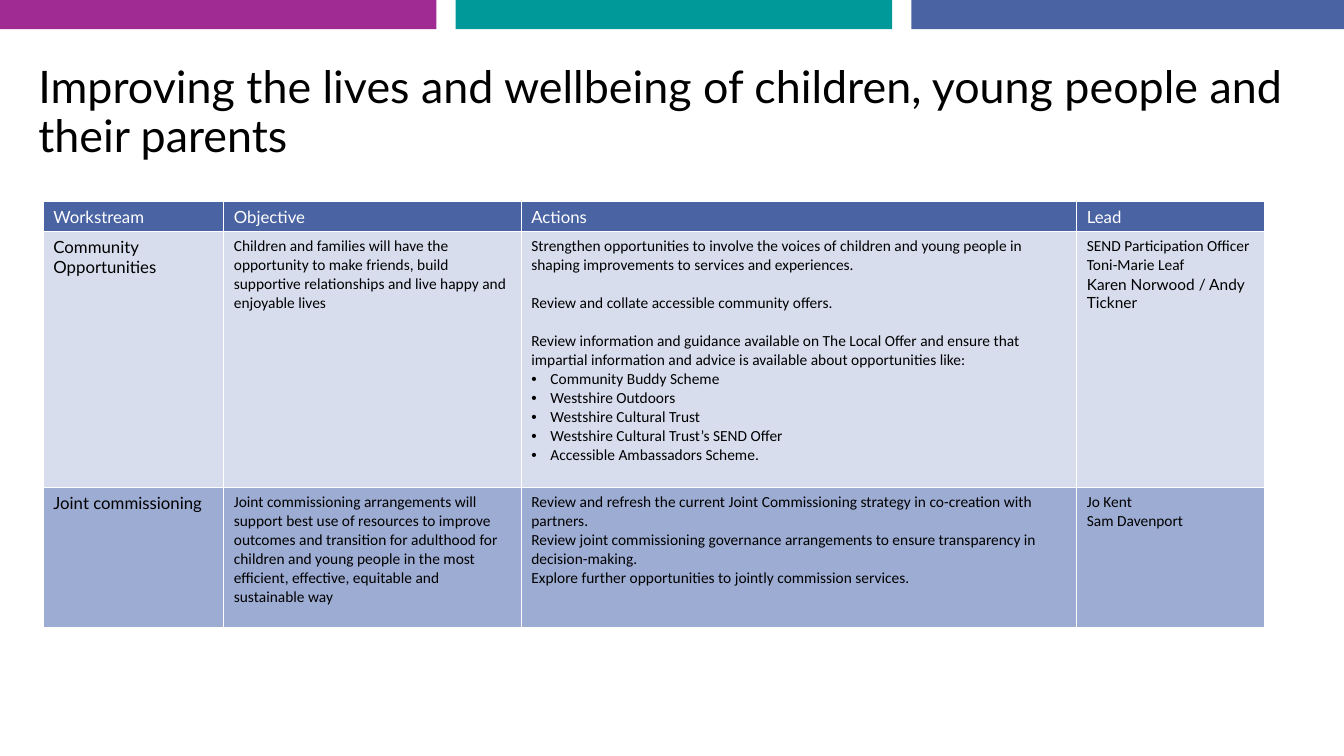
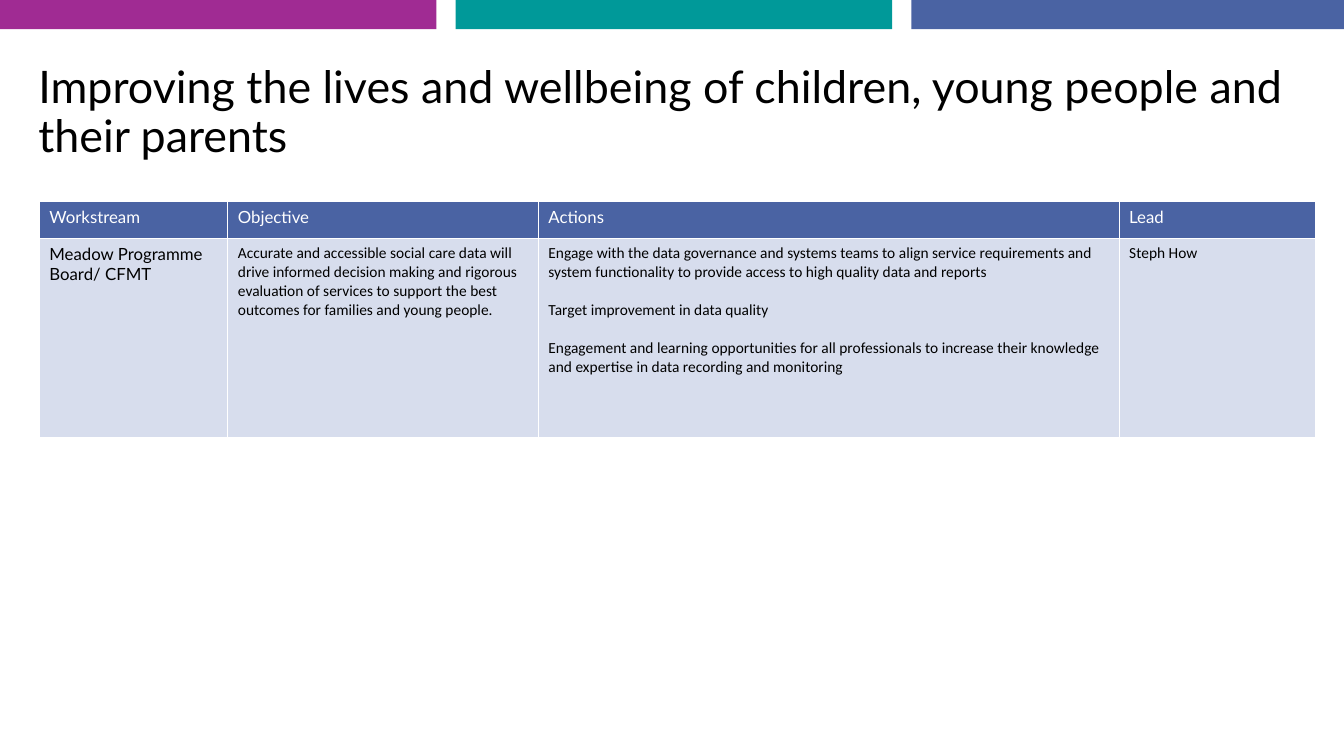
import pptx
import pptx.util
import pptx.dml.color
import pptx.enum.shapes
import pptx.enum.text
import pptx.oxml.ns
from lxml import etree

PX = 9144
SLIDE_W, SLIDE_H = 1333, 750
BLACK, WHITE = "000000", "FFFFFF"
HEADER_FILL = "4A63A3"
ROW_FILLS = ["D7DDED", "9DACD3"]

BAND_COLOURS = ["A02B93", "009999", "4A63A3"]
BAND_W, BAND_H, BAND_PITCH = 433, 29, 452
TITLE_BOX = (28, 40, 1277, 145)
TABLE_TOP = 200
BULLET_INDENT = 19
LINE_GAP = 13.6

TITLE = "Improving the lives and wellbeing of children, young people and their parents"
HEADINGS = ["Workstream", "Objective", "Actions", "Lead"]

STYLES = {
    "heading": ("Lato", 12, WHITE),
    "workstream": ("Lato", 12, BLACK),
    "name": ("Lato", 11, BLACK),
    "line": ("Calibri", 11, BLACK),
    "spaced": ("Calibri", 11, BLACK),
    "bullet": ("Calibri", 11, BLACK),
}

PAGES = [
    {
        "left": 43,
        "columns": [179, 295, 551, 186],
        "heights": [30, 254, 139],
        "rows": [
            [
                [("workstream", "Community Opportunities")],
                [("line", "Children and families will have the opportunity to make friends, build "
                          "supportive relationships and live happy and enjoyable lives")],
                [
                    ("line", "Strengthen opportunities to involve the voices of children and young "
                             "people in shaping improvements to services and experiences."),
                    ("spaced", "Review and collate accessible community offers."),
                    ("spaced", "Review information and guidance available on The Local Offer and ensure "
                               "that impartial information and advice is available about "
                               "opportunities like:"),
                    ("bullet", "Community Buddy Scheme"),
                    ("bullet", "Westshire Outdoors"),
                    ("bullet", "Westshire Cultural Trust"),
                    ("bullet", "Westshire Cultural Trust’s SEND Offer"),
                    ("bullet", "Accessible Ambassadors Scheme."),
                ],
                [
                    ("line", "SEND Participation Officer"),
                    ("line", "Toni-Marie Leaf"),
                    ("name", "Karen Norwood / Andy Tickner"),
                ],
            ],
            [
                [("workstream", "Joint commissioning")],
                [("line", "Joint commissioning arrangements will support best use of resources to "
                          "improve outcomes and transition for adulthood for children and young "
                          "people in the most efficient, effective, equitable and sustainable way")],
                [
                    ("line", "Review and refresh the current Joint Commissioning strategy in "
                             "co-creation with partners."),
                    ("line", "Review joint commissioning governance arrangements to ensure "
                             "transparency in decision-making."),
                    ("line", "Explore further opportunities to jointly commission services."),
                ],
                [("line", "Jo Kent"), ("line", "Sam Davenport")],
            ],
        ],
    },
    {
        "left": 39,
        "columns": [187, 308, 576, 195],
        "heights": [37, 197],
        "rows": [
            [
                [("workstream", "Meadow Programme Board/ CFMT")],
                [("line", "Accurate and accessible social care data will drive informed decision "
                          "making and rigorous evaluation of services to support the best outcomes "
                          "for families and young people.")],
                [
                    ("line", "Engage with the data governance and systems teams to align service "
                             "requirements and system functionality to provide access to high "
                             "quality data and reports"),
                    ("spaced", "Target improvement in data quality"),
                    ("spaced", "Engagement and learning opportunities for all professionals to "
                               "increase their knowledge and expertise in data recording and "
                               "monitoring"),
                ],
                [("line", "Steph How")],
            ],
        ],
    },
]


def px(length):
    return pptx.util.Emu(length * PX)


def colour(value):
    return pptx.dml.color.RGBColor.from_string(value)


def add_run(paragraph, text, font_name, size, text_colour):
    run = paragraph.add_run()
    run.text = text
    run.font.name = font_name
    run.font.size = pptx.util.Pt(size)
    run.font.bold = False
    run.font.color.rgb = colour(text_colour)


def add_child(parent, tag, **attributes):
    return etree.SubElement(parent, pptx.oxml.ns.qn(tag), **attributes)


def add_bullet(paragraph):
    properties = paragraph._p.get_or_add_pPr()
    properties.set("marL", str(px(BULLET_INDENT)))
    properties.set("indent", str(-px(BULLET_INDENT)))
    add_child(properties, "a:buFont", typeface="Arial")
    add_child(properties, "a:buChar", char="•")


def fill_cell(cell, paragraphs, fill):
    properties = cell._tc.get_or_add_tcPr()
    for side in ("a:lnL", "a:lnR", "a:lnT", "a:lnB"):
        border = add_child(properties, side, w=str(pptx.util.Pt(1)))
        add_child(add_child(border, "a:solidFill"), "a:srgbClr", val=WHITE)
    cell.fill.solid()
    cell.fill.fore_color.rgb = colour(fill)
    frame = cell.text_frame
    for index, (style, text) in enumerate(paragraphs):
        paragraph = frame.add_paragraph() if index else frame.paragraphs[0]
        if style == "bullet":
            add_bullet(paragraph)
        if style == "spaced":
            paragraph.space_before = pptx.util.Pt(LINE_GAP)
        add_run(paragraph, text, *STYLES[style])


def add_workstreams(slide, page):
    heading_row = [[("heading", heading)] for heading in HEADINGS]
    rows = [heading_row] + page["rows"]
    fills = [HEADER_FILL] + ROW_FILLS
    table = slide.shapes.add_table(
        len(rows), len(HEADINGS), px(page["left"]), px(TABLE_TOP),
        px(sum(page["columns"])), px(sum(page["heights"]))).table
    table.horz_banding = False
    for column, width in zip(table.columns, page["columns"]):
        column.width = px(width)
    for row, height, contents, fill in zip(table.rows, page["heights"], rows, fills):
        row.height = px(height)
        for cell, paragraphs in zip(row.cells, contents):
            fill_cell(cell, paragraphs, fill)


def add_title(slide):
    title = slide.shapes.title
    title.left, title.top, title.width, title.height = map(px, TITLE_BOX)
    frame = title.text_frame
    frame.word_wrap = True
    frame.auto_size = pptx.enum.text.MSO_AUTO_SIZE.NONE
    frame.vertical_anchor = pptx.enum.text.MSO_ANCHOR.MIDDLE
    paragraph = frame.paragraphs[0]
    paragraph.alignment = pptx.enum.text.PP_ALIGN.LEFT
    paragraph.line_spacing = 0.9
    add_run(paragraph, TITLE, "Lato", 32, BLACK)


def move_bands_to_master(slide, master):
    for index, band_colour in enumerate(BAND_COLOURS):
        left = index * BAND_PITCH
        band = slide.shapes.add_shape(
            pptx.enum.shapes.MSO_SHAPE.RECTANGLE, px(left), 0,
            px(min(BAND_W, SLIDE_W - left)), px(BAND_H))
        band.shadow.inherit = False
        band.fill.solid()
        band.fill.fore_color.rgb = colour(band_colour)
        band.line.fill.background()
        master.shapes.element.append(band.element)


def main():
    deck = pptx.Presentation()
    deck.slide_width, deck.slide_height = px(SLIDE_W), px(SLIDE_H)
    title_only = deck.slide_layouts[5]
    slides = [deck.slides.add_slide(title_only) for _ in PAGES]
    move_bands_to_master(slides[0], deck.slide_master)
    for slide, page in zip(slides, PAGES):
        add_title(slide)
        add_workstreams(slide, page)
    deck.save("out.pptx")


if __name__ == "__main__":
    main()
